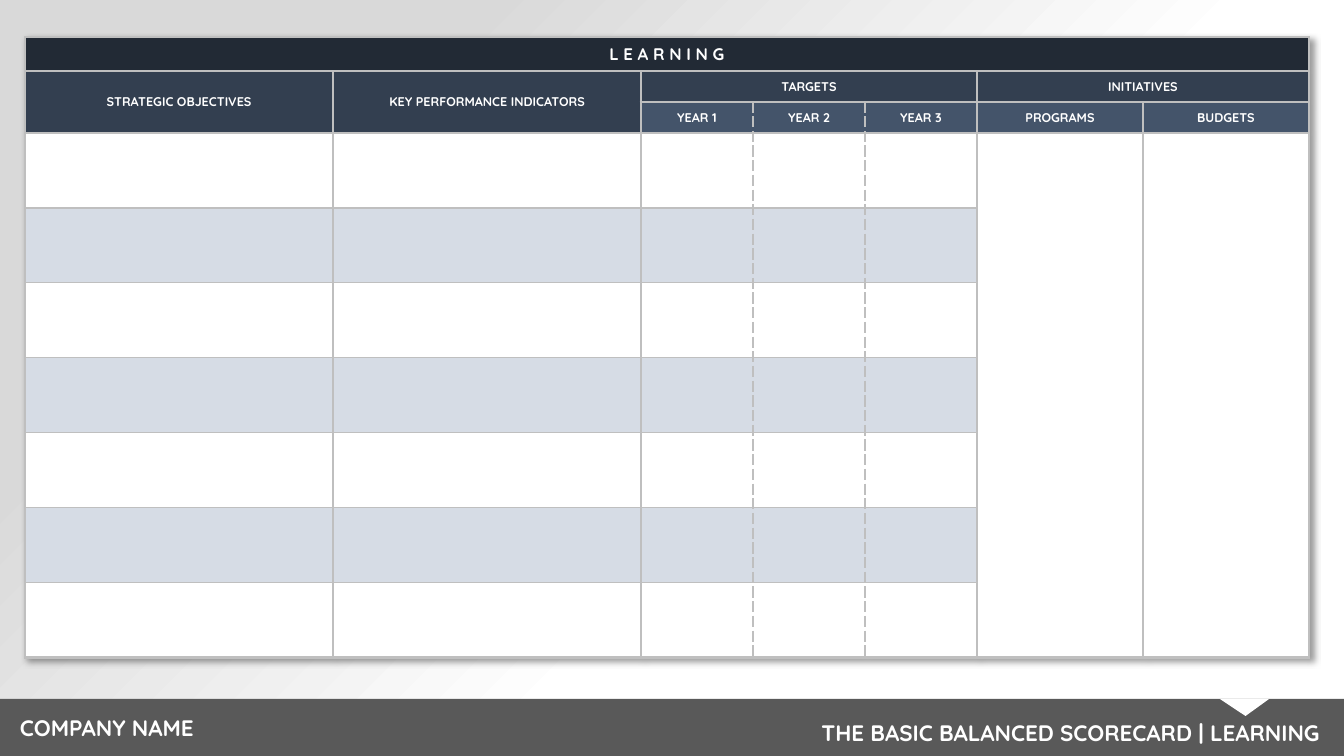
from pptx import Presentation
from pptx.dml.color import RGBColor
from pptx.enum.shapes import MSO_SHAPE
from pptx.enum.text import MSO_ANCHOR, MSO_AUTO_SIZE, PP_ALIGN
from pptx.oxml import parse_xml
from pptx.oxml.ns import nsdecls, qn
from pptx.util import Pt

WHITE = RGBColor(0xFF, 0xFF, 0xFF)
SILVER = RGBColor(0xD9, 0xD9, 0xD9)
GRAY = RGBColor(0x59, 0x59, 0x59)
LINE = RGBColor(0xBF, 0xBF, 0xBF)
NIGHT = RGBColor(0x22, 0x2A, 0x35)
NAVY = RGBColor(0x33, 0x3F, 0x50)
SLATE = RGBColor(0x44, 0x54, 0x6A)
PALE = RGBColor(0xD6, 0xDC, 0xE5)

WIDE, HIGH = 1344, 756
SCALE = 12192000 / WIDE


def px(*vals):
    return [round(val * SCALE) for val in vals]


def write(frame, text, size, align):
    frame.text = text
    para = frame.paragraphs[0]
    para.alignment = align
    para.line_spacing = 1.0
    font = para.runs[0].font
    font.name, font.size, font.bold = "Quicksand", Pt(size), True
    font.color.rgb = WHITE


deck = Presentation()
deck.slide_width, deck.slide_height = px(WIDE, HIGH)
slide = deck.slides.add_slide(deck.slide_layouts[5])
shapes = slide.shapes

# Background: white glow from the bottom right corner
fill = slide.background.fill
fill.gradient()
for stop, (place, color) in zip(fill.gradient_stops, [(0.4, WHITE), (0.77, SILVER)]):
    stop.position, stop.color.rgb = place, color
grad = slide.element.find(".//" + qn("a:gradFill"))
grad.replace(grad.find(qn("a:lin")), parse_xml(
    f'<a:path {nsdecls("a")} path="circle"><a:fillToRect l="100000" t="100000"/></a:path>'))

# Footer bar and its notch
bar = shapes.add_shape(MSO_SHAPE.RECTANGLE, *px(0, 699, WIDE, 57))
notch = shapes.add_shape(MSO_SHAPE.ISOSCELES_TRIANGLE, *px(1220, 699, 49, 17))
notch.rotation = 180
notch.adjustments[0] = 0.48
for shape, color in [(bar, GRAY), (notch, WHITE)]:
    shape.shadow.inherit = False
    shape.fill.solid()
    shape.fill.fore_color.rgb = color
    shape.line.fill.background()

# Footer texts, with the title raised above the bar
title = shapes.title
notch.element.addnext(title.element)
title.left, title.top, title.width, title.height = px(646, 714, 684, 37)
firm = shapes.add_textbox(*px(10, 709, 684, 37))
for box, text, align in [
    (title, "THE BASIC BALANCED SCORECARD | LEARNING", PP_ALIGN.RIGHT),
    (firm, "COMPANY NAME", PP_ALIGN.LEFT),
]:
    frame = box.text_frame
    write(frame, text, 16, align)
    frame.word_wrap = True
    frame.auto_size = MSO_AUTO_SIZE.NONE
    frame.vertical_anchor = MSO_ANCHOR.TOP

# Scorecard table
cols = [308, 308, 112, 112, 112, 166, 166]
rows = [34, 31, 31] + [75] * 7
grid = shapes.add_table(len(rows), len(cols), *px(25, 37, sum(cols), sum(rows)))
table = grid.table
table.first_row = table.horz_banding = False
for col, width in zip(table.columns, px(*cols)):
    col.width = width
for row, height in zip(table.rows, px(*rows)):
    row.height = height

# Table shadow
table._tbl.tblPr.insert(0, parse_xml(
    f'<a:effectLst {nsdecls("a")}><a:outerShdw blurRad="50800" dist="38100" dir="2700000" '
    'algn="tl" rotWithShape="0"><a:srgbClr val="000000"><a:alpha val="40000"/></a:srgbClr>'
    '</a:outerShdw></a:effectLst>'))

# Merged cells: first row and column, last row and column
for top, left, low, right in [
    (0, 0, 0, 6), (1, 0, 2, 0), (1, 1, 2, 1), (1, 2, 1, 4),
    (1, 5, 1, 6), (3, 5, 9, 5), (3, 6, 9, 6),
]:
    table.cell(top, left).merge(table.cell(low, right))

heads = {
    (0, 0): "L E A R N I N G",
    (1, 0): "STRATEGIC OBJECTIVES",
    (1, 1): "KEY PERFORMANCE INDICATORS",
    (1, 2): "TARGETS",
    (1, 5): "INITIATIVES",
    (2, 2): "YEAR 1",
    (2, 3): "YEAR 2",
    (2, 4): "YEAR 3",
    (2, 5): "PROGRAMS",
    (2, 6): "BUDGETS",
}
tints = [NIGHT, NAVY, SLATE] + [WHITE, PALE] * 3 + [WHITE]
thick, dashed = (2, 5, len(cols)), (3, 4)

for r, tint in enumerate(tints):
    for c in range(len(cols)):
        cell = table.cell(r, c)
        cell.margin_top = cell.margin_bottom = 0
        cell.margin_left, cell.margin_right = px(7, 7)
        cell.vertical_anchor = MSO_ANCHOR.MIDDLE
        if cell.is_spanned:
            continue

        # Borders depend on the grid line they lie on
        props = cell._tc.get_or_add_tcPr()
        end = c + cell.span_width
        low = r + cell.span_height
        for side, heavy, dash in [
            ("L", c in thick and r > 0, c in dashed),
            ("R", end in thick, end in dashed),
            ("T", False, False),
            ("B", low == len(rows), False),
        ]:
            kind = "sysDash" if dash else "solid"
            props.append(parse_xml(
                f'<a:ln{side} {nsdecls("a")} w="{Pt(2.25 if heavy else 1)}"><a:solidFill>'
                f'<a:srgbClr val="{LINE}"/></a:solidFill><a:prstDash val="{kind}"/></a:ln{side}>'))

        cell.fill.solid()
        cell.fill.fore_color.rgb = tint
        if (r, c) in heads:
            write(cell.text_frame, heads[r, c], 9 if r else 12, PP_ALIGN.CENTER)

deck.save("out.pptx")
